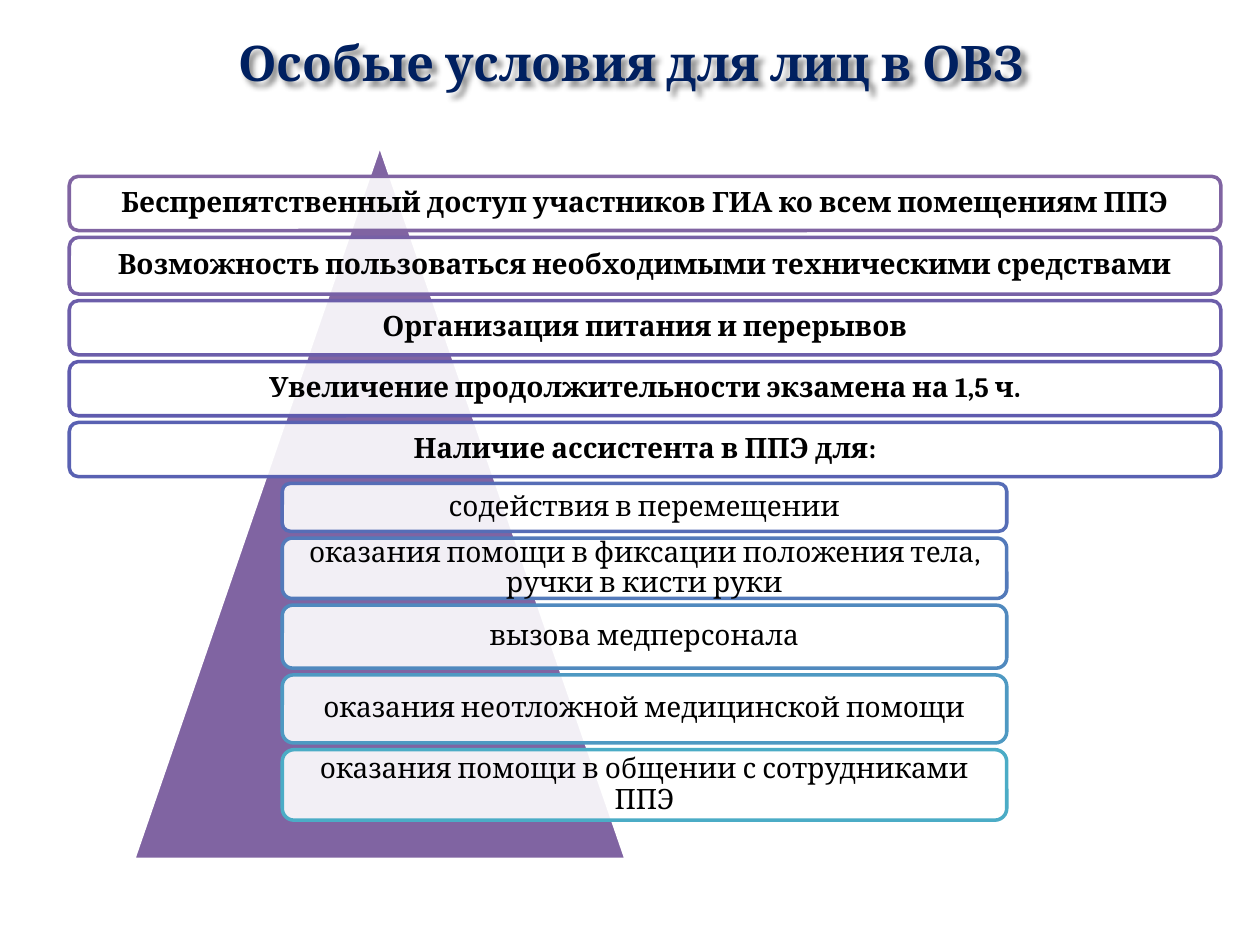
from lxml import etree
from pptx import Presentation
from pptx.dml.color import RGBColor
from pptx.enum.shapes import MSO_SHAPE as Preset
from pptx.enum.text import MSO_ANCHOR as Anchor, PP_ALIGN as Align
from pptx.oxml import parse_xml
from pptx.oxml.ns import nsdecls, qn
from pptx.util import Inches, Pt

FONT = "Cambria"
NAVY = RGBColor(0x00, 0x20, 0x60)
PURPLE = RGBColor(0x80, 0x64, 0xA2)
WHITE = RGBColor(0xFF, 0xFF, 0xFF)
BLACK = RGBColor(0x00, 0x00, 0x00)

# Box geometry in inches: left and width of the two levels
WIDE = (0.55, 9.14)
NARROW = (2.24, 5.75)
STACK_TOP, STACK_BOTTOM = 1.4, 6.51

# Level, height, outline colour, text
CONDITIONS = [
    (WIDE, 0.43, "8064A2", "Беспрепятственный доступ участников ГИА ко всем помещениям ППЭ"),
    (WIDE, 0.45, "7761A6", "Возможность пользоваться необходимыми техническими средствами"),
    (WIDE, 0.43, "6C5EAA", "Организация питания и перерывов"),
    (WIDE, 0.43, "5F5BAE", "Увеличение продолжительности экзамена на 1,5 ч."),
    (WIDE, 0.43, "5961B2", "Наличие ассистента в ППЭ для:"),
    (NARROW, 0.38, "566DB6", "содействия в перемещении"),
    (NARROW, 0.48, "537ABA", "оказания помощи в фиксации положения тела, ручки в кисти руки"),
    (NARROW, 0.50, "5089BE", "вызова медперсонала"),
    (NARROW, 0.54, "4E99C2", "оказания неотложной медицинской помощи"),
    (NARROW, 0.56, "4BACC6", "оказания помощи в общении с сотрудниками ППЭ"),
]


def write_text(shape, text, size, color, bold):
    frame = shape.text_frame
    frame.word_wrap = True
    frame.vertical_anchor = Anchor.MIDDLE
    frame.text = text
    paragraph = frame.paragraphs[0]
    paragraph.alignment = Align.CENTER
    font = paragraph.runs[0].font
    font.name, font.size, font.bold = FONT, Pt(size), bold
    font.color.rgb = color
    return frame


def add_filled(preset, left, top, width, height, fill, line):
    shape = slide.shapes.add_shape(
        preset, Inches(left), Inches(top), Inches(width), Inches(height))
    shape.shadow.inherit = False
    shape.fill.solid()
    shape.fill.fore_color.rgb = fill
    shape.line.color.rgb = line
    shape.line.width = Pt(2)
    return shape


presentation = Presentation()
presentation.slide_width = Inches(10)
presentation.slide_height = Inches(7.5)
slide = presentation.slides.add_slide(presentation.slide_layouts[6])

# Title with a soft shadow
title = slide.shapes.add_textbox(Inches(0.51), Inches(0.21), Inches(9), Inches(0.57))
write_text(title, "Особые условия для лиц в ОВЗ", 28, NAVY, True)
title.fill.background()
title._element.spPr.append(parse_xml(
    f'<a:effectLst {nsdecls("a")}>'
    '<a:outerShdw blurRad="38100" dist="38100" dir="2700000">'
    '<a:srgbClr val="000000"><a:alpha val="43000"/></a:srgbClr>'
    '</a:outerShdw></a:effectLst>'))

# Triangle behind the list
add_filled(Preset.ISOSCELES_TRIANGLE, 1.06, 1.15, 3.91, 5.67, PURPLE, WHITE)

# Stack of conditions with equal gaps
total_height = sum(height for _, height, _, _ in CONDITIONS)
gap = (STACK_BOTTOM - STACK_TOP - total_height) / (len(CONDITIONS) - 1)
top = STACK_TOP
for level, height, outline, text in CONDITIONS:
    left, width = level
    box = add_filled(Preset.ROUNDED_RECTANGLE, left, top, width, height,
                     WHITE, RGBColor.from_string(outline))
    fill_color = box._element.spPr.find(qn("a:solidFill"))[0]
    etree.SubElement(fill_color, qn("a:alpha"), val="90000")
    frame = write_text(box, text, 16, BLACK, level is WIDE)
    frame.margin_left = frame.margin_right = Inches(0.07)
    frame.margin_top = frame.margin_bottom = Inches(0.07)
    frame.paragraphs[0].line_spacing = 0.9
    top += height + gap

presentation.save("out.pptx")
